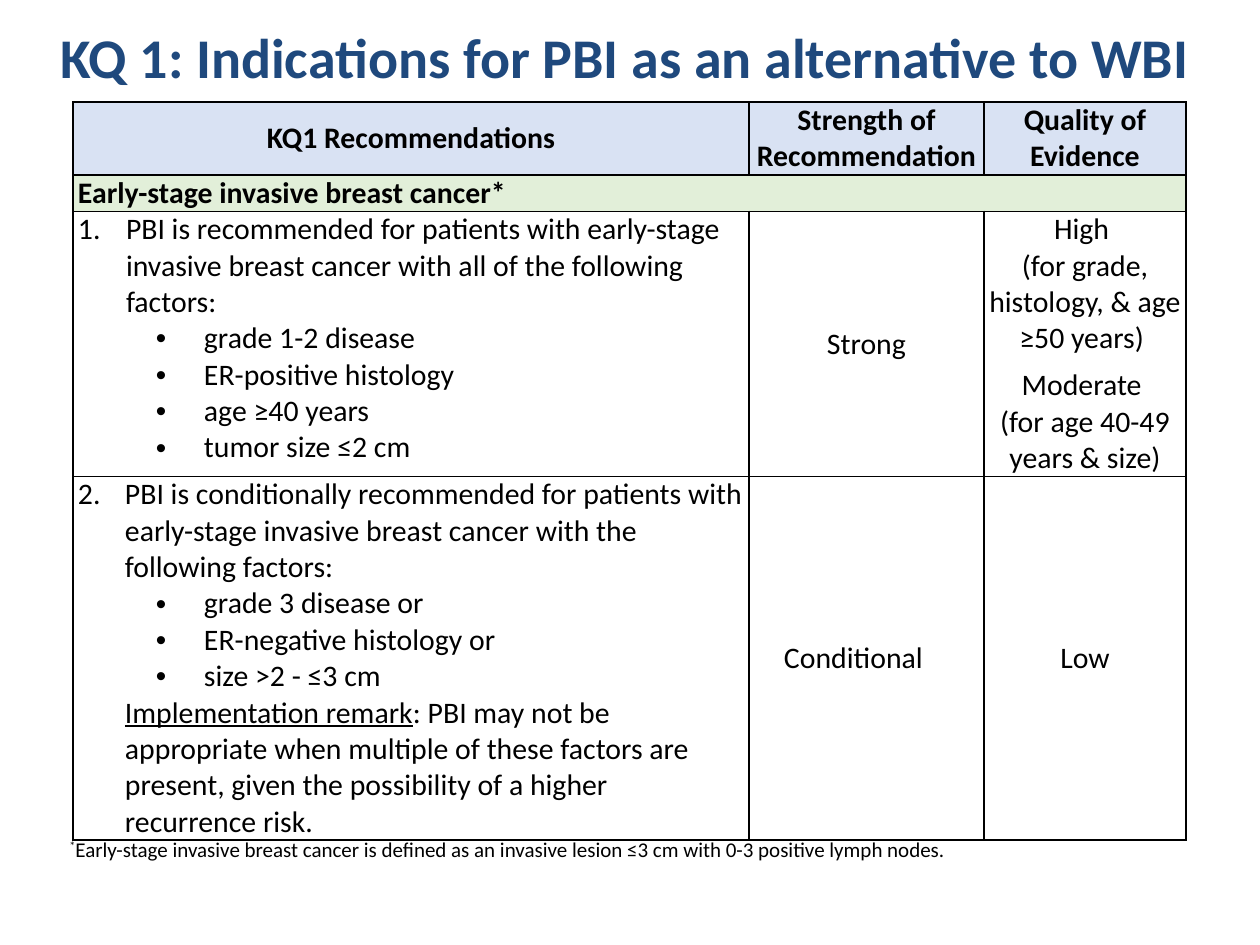
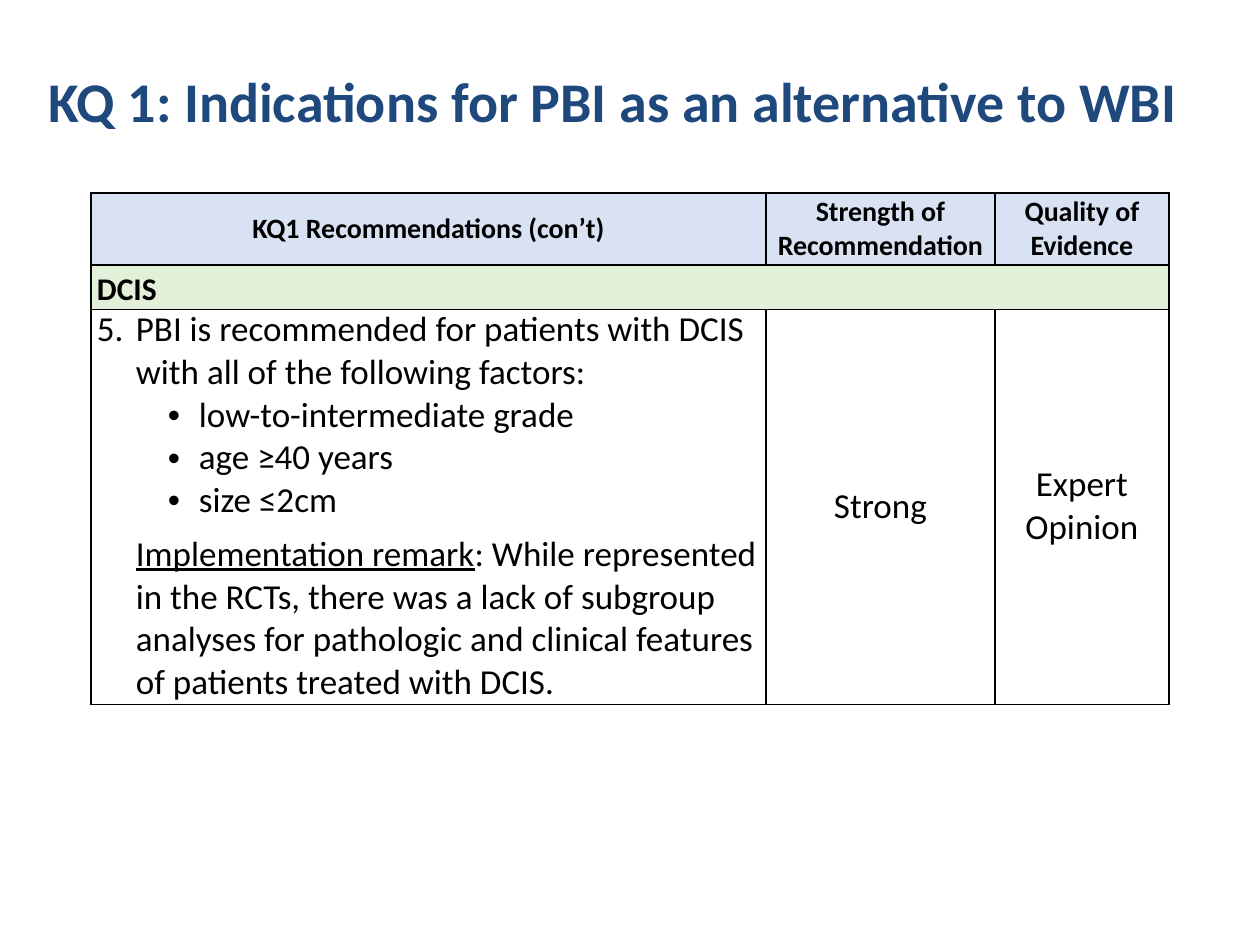
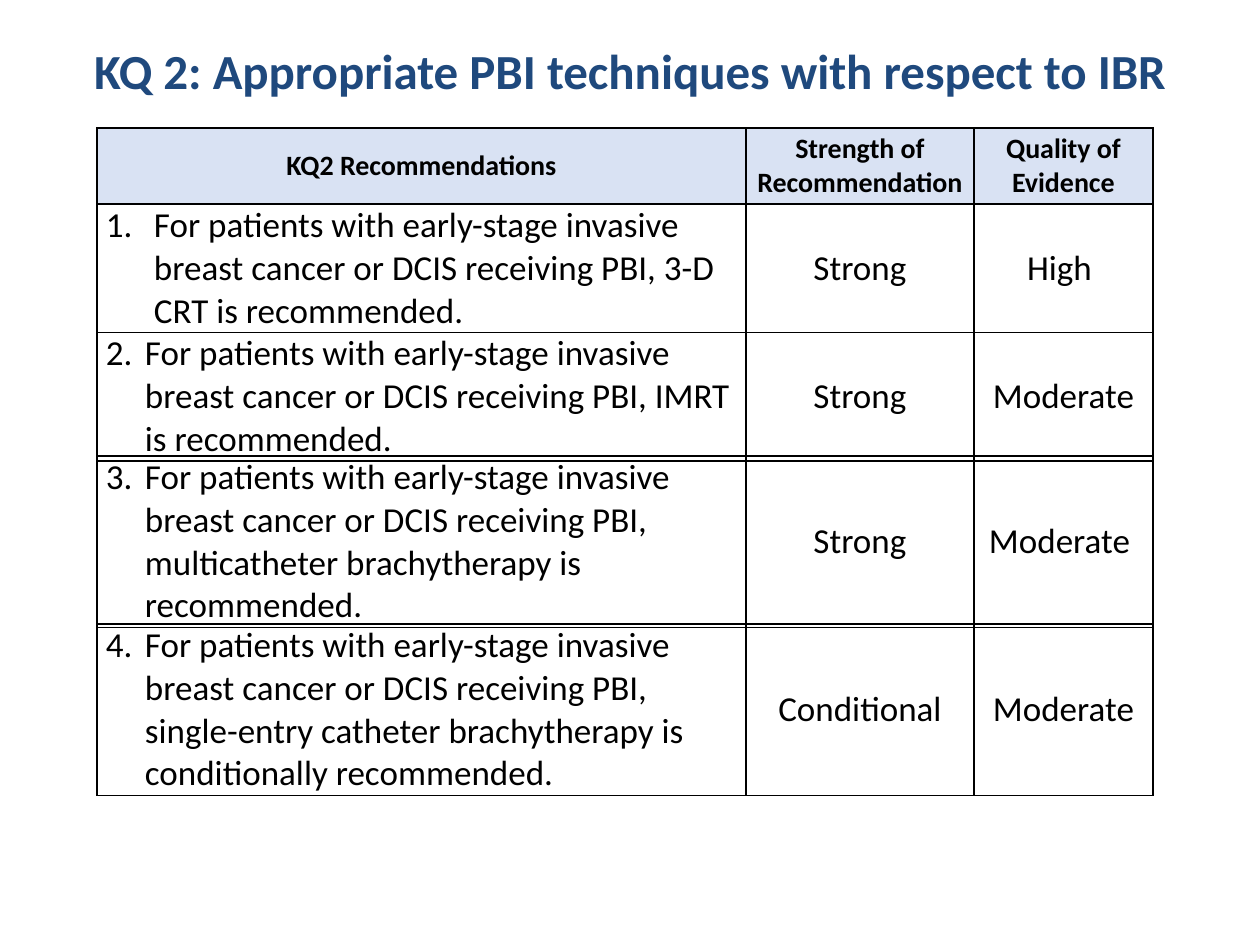
from dataclasses import dataclass

from lxml import etree
from pptx import Presentation
from pptx import util as u
from pptx.dml.color import RGBColor
from pptx.enum import text as t
from pptx.oxml import ns

PX_PER_INCH = 126
FONT = "Calibri"
NAVY, BLACK = "1F497D", "000000"
HEADER_FILL, GROUP_FILL = "D9E2F3", "E2EFD9"
LEFT, CENTER = t.PP_ALIGN.LEFT, t.PP_ALIGN.CENTER
TOP, MIDDLE = t.MSO_ANCHOR.TOP, t.MSO_ANCHOR.MIDDLE


def px(length):
    return u.Emu(round(length * 914400 / PX_PER_INCH))


def color(value):
    return RGBColor.from_string(value)


def add_xml(parent, tag, **attributes):
    values = {key: str(value) for key, value in attributes.items()}
    return etree.SubElement(parent, ns.qn(tag), values)


@dataclass
class Line:
    text: str
    lead: str = ""
    left: int = 0
    hang: int = 0
    number: int = 0
    bullet: bool = False
    after: int = 0
    spacing: float = 1.0
    align: t.PP_ALIGN = LEFT


@dataclass
class Cell:
    lines: list
    anchor: t.MSO_ANCHOR = MIDDLE
    fill: str = ""
    size: int = 0
    bold: bool = False
    inset: int = 0


def centered(*texts, **options):
    return Cell([Line(text, align=CENTER) for text in texts], **options)


def header(subject, size, inset):
    labels = (subject, "Strength of Recommendation", "Quality of Evidence")
    return [centered(label, fill=HEADER_FILL, size=size, bold=True, inset=inset)
            for label in labels]


def group(label, size, spacing=1.0):
    return [Cell([Line(label, spacing=spacing)], fill=GROUP_FILL, size=size, bold=True)]


def numbered(number, text, hang):
    return Line(text, number=number, left=hang, hang=hang)


def bullets(items, left, hang, after=0):
    lines = [Line(item, bullet=True, left=left, hang=hang) for item in items]
    lines[-1].after = after
    return lines


def remark(text, left):
    return Line(text, lead="Implementation remark", left=left)


def recommendation(lines, strength, quality):
    return [Cell(lines, anchor=TOP), strength, quality]


class Deck:
    def __init__(self):
        self.deck = Presentation()
        self.deck.slide_width = u.Inches(10)
        self.deck.slide_height = u.Inches(7.5)
        self.page = None

    def font(self, para, size, shade=BLACK, bold=False):
        para.font.name = FONT
        para.font.size = u.Pt(size)
        para.font.bold = bold
        para.font.color.rgb = color(shade)

    def title(self, text, place, size):
        self.page = self.deck.slides.add_slide(self.deck.slide_layouts[5])
        box = self.page.shapes.title
        box.left, box.top, box.width, box.height = map(px, place)
        frame = box.text_frame
        frame.text = text
        frame.auto_size = t.MSO_AUTO_SIZE.NONE
        frame.vertical_anchor = TOP
        frame.margin_top = px(9)
        para = frame.paragraphs[0]
        para.alignment = CENTER
        self.font(para, size, NAVY, True)

    def line(self, para, line, size, bold):
        para.alignment = line.align
        if line.spacing != 1:
            para.line_spacing = line.spacing
        if line.after:
            para.space_after = u.Pt(line.after)
        properties = para._p.get_or_add_pPr()
        properties.set("marL", str(px(line.left)))
        properties.set("indent", str(px(-line.hang)))
        if line.number:
            add_xml(properties, "a:buFont", typeface="+mj-lt")
            add_xml(properties, "a:buAutoNum", type="arabicPeriod", startAt=line.number)
        elif line.bullet:
            add_xml(properties, "a:buFont", typeface="Arial")
            add_xml(properties, "a:buChar", char="•")
        if line.lead:
            span = para.add_run()
            span.text = line.lead
            span.font.underline = True
        if line.text:
            para.add_run().text = line.text
        self.font(para, size, bold=bold)

    def borders(self, cell):
        properties = cell._tc.get_or_add_tcPr()
        for side in ("a:lnL", "a:lnR", "a:lnT", "a:lnB"):
            edge = add_xml(properties, side, w=u.Pt(1))
            add_xml(add_xml(edge, "a:solidFill"), "a:srgbClr", val=BLACK)

    def cell(self, target, content, size, inset):
        target.margin_left = target.margin_right = px(content.inset or inset)
        target.margin_top = target.margin_bottom = 0
        target.vertical_anchor = content.anchor
        if content.fill:
            target.fill.solid()
            target.fill.fore_color.rgb = color(content.fill)
        frame = target.text_frame
        for index, line in enumerate(content.lines):
            para = frame.add_paragraph() if index else frame.paragraphs[0]
            self.line(para, line, content.size or size, content.bold)

    def table(self, left, top, columns, heights, rows, size, inset):
        frame = self.page.shapes.add_table(
            len(rows), len(columns), px(left), px(top), px(sum(columns)), px(sum(heights)))
        table = frame.table
        table.first_row = table.horz_banding = False
        for column, width in zip(table.columns, columns):
            column.width = px(width)
        for row, height in zip(table.rows, heights):
            row.height = px(height)
        for target in table.iter_cells():
            self.borders(target)
            target.fill.background()
        for index, row in enumerate(rows):
            if len(row) < len(columns):
                table.cell(index, 0).merge(table.cell(index, len(columns) - 1))
            for column, content in enumerate(row):
                self.cell(table.cell(index, column), content, size, inset)

    def footnote(self, mark, text, place, size):
        box = self.page.shapes.add_textbox(*map(px, place))
        frame = box.text_frame
        frame.word_wrap = True
        frame.auto_size = t.MSO_AUTO_SIZE.SHAPE_TO_FIT_TEXT
        para = frame.paragraphs[0]
        span = para.add_run()
        span.text = mark
        span._r.get_or_add_rPr().set("baseline", "30000")
        self.line(para, Line(text, left=15, after=6), size, False)


def invasive_cancer(deck):
    deck.title("KQ 1: Indications for PBI as an alternative to WBI", (42, 14, 1166, 64), 32)
    evidence = centered("High ", "(for grade, histology, & age ≥50 years) ",
                        "Moderate ", "(for age 40-49 years & size)")
    evidence.lines[1].after = 6
    first = [
        numbered(1, "PBI is recommended for patients with early-stage invasive breast "
                    "cancer with all of the following factors:", 48),
        *bullets(["grade 1-2 disease", "ER-positive histology", "age ≥40 years",
                  "tumor size ≤2 cm"], 126, 48),
    ]
    second = [
        numbered(2, "PBI is conditionally recommended for patients with early-stage "
                    "invasive breast cancer with the following factors:", 47),
        *bullets(["grade 3 disease or", "ER-negative histology or",
                  "size >2 - ≤3 cm"], 126, 48),
        remark(": PBI may not be appropriate when multiple of these factors are present, "
               "given the possibility of a higher recurrence risk.", 47),
    ]
    rows = [
        header("KQ1 Recommendations", 17, 5),
        group("Early-stage invasive breast cancer*", 17),
        recommendation(first, centered("Strong"), evidence),
        recommendation(second, Cell([Line("Conditional", left=30)]), centered("Low")),
    ]
    deck.table(73, 102, (676, 235, 202), (73, 36, 265, 363), rows, 17, 5)
    deck.footnote("*", "Early-stage invasive breast cancer is defined as an invasive lesion "
                       "≤3 cm with 0-3 positive lymph nodes.", (42, 830, 1011, 38), 12)


def dcis(deck):
    deck.title("KQ 1: Indications for PBI as an alternative to WBI", (30, 58, 1166, 83), 32)
    columns = (675, 229, 174)
    left, top, header_height, group_height = 91, 193, 72, 43
    fifth = [
        numbered(5, "PBI is recommended for patients with DCIS with all of the "
                    "following factors:", 39),
        *bullets(["low-to-intermediate grade", "age ≥40 years", "size ≤2cm"], 102, 31, 6),
        remark(": While represented in the RCTs, there was a lack of subgroup analyses for "
               "pathologic and clinical features of patients treated with DCIS.", 39),
    ]
    rows = [
        header("KQ1 Recommendations (con’t)", 16, 5),
        [centered("") for _ in columns],
        recommendation(fifth, centered("Strong"), centered("Expert Opinion")),
    ]
    deck.table(left, top, columns, (header_height, group_height, 393), rows, 20, 6)
    deck.table(left, top + header_height, (sum(columns),), (group_height,),
               [group("DCIS", 18, 1.15)], 18, 6)


def techniques(deck):
    deck.title("KQ 2: Appropriate PBI techniques with respect to IBR", (63, 32, 1134, 80), 28)
    items = [
        ("3-D CRT is recommended.", "Strong", "High "),
        ("IMRT is recommended.", "Strong", "Moderate"),
        ("multicatheter brachytherapy is recommended.", "Strong", "Moderate "),
        ("single-entry catheter brachytherapy is conditionally recommended.",
         "Conditional", "Moderate"),
    ]
    rows = [header("KQ2 Recommendations", 16, 6)]
    for number, (technique, strength, quality) in enumerate(items, 1):
        text = ("For patients with early-stage invasive breast cancer or DCIS "
                f"receiving PBI, {technique}")
        hang = 48 if number == 1 else 39
        rows.append(recommendation([numbered(number, text, hang)],
                                   centered(strength), centered(quality)))
    parts = [
        (128, (76, 128, 128), rows[:3]),
        (456, (171,), rows[3:4]),
        (624, (171,), rows[4:]),
    ]
    for top, heights, part in parts:
        deck.table(97, top, (649, 228, 179), heights, part, 20, 9)


def main():
    deck = Deck()
    invasive_cancer(deck)
    dcis(deck)
    techniques(deck)
    deck.deck.save("out.pptx")


if __name__ == "__main__":
    main()
